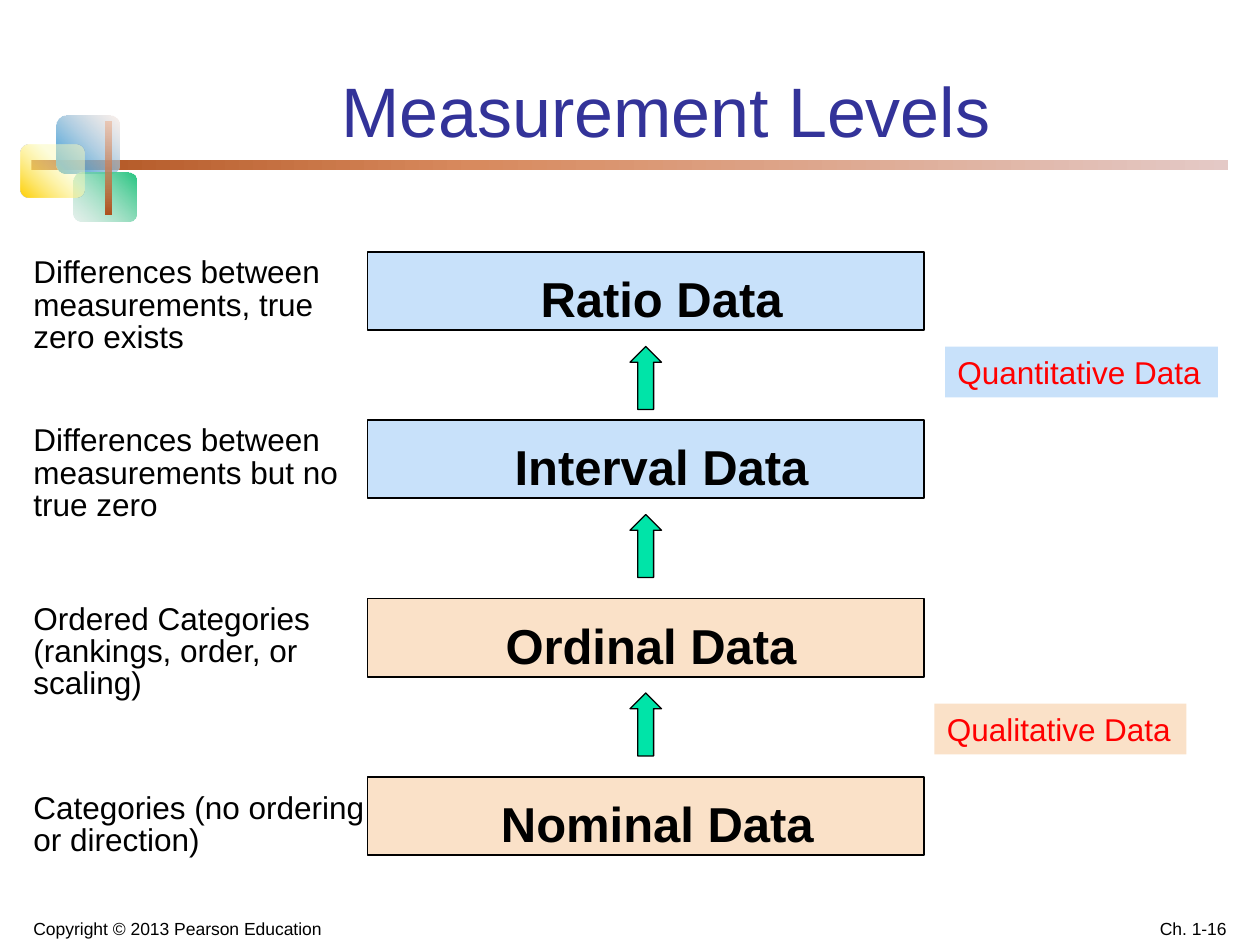
from lxml import etree
from pptx import Presentation
from pptx import util as u
from pptx.dml.color import RGBColor
from pptx.enum import shapes, text
from pptx.oxml.ns import qn

UNIT = 1 / 12  # the grid is 120 columns by 90 rows on a 10 x 7.5 inch slide
COLORS = {
    "title": "333399", "ink": "000000", "accent": "FF0000", "arrow": "00E4A8",
    "quantitative": "C8E1FA", "qualitative": "FAE1C8",
    "rust": "AE511E", "copper": "D88A5E", "blush": "E4C9C6", "peach": "EAA782",
    "blue": "2895D8", "cream": "F7E2D9", "green": "25C580", "mint": "CCE2D9",
    "yellow": "FFCF01", "lemon": "FCFCBC",
}
# name, kind, row, centre column of the name, note, note row, note width
LEVELS = [
    ("Ratio Data", "quantitative", 24, 63,
     "Differences between measurements, true zero exists", 24, 31),
    ("Interval Data", "quantitative", 40, 63,
     "Differences between measurements but no true zero", 40, 32),
    ("Ordinal Data", "qualitative", 57, 62,
     "Ordered Categories (rankings, order, or scaling)", 57, 35),
    ("Nominal Data", "qualitative", 74, 62.6,
     "Categories (no ordering or direction)", 75, 34),
]
# column, row, width, height, corner, angle, stops of (position, colour, opacity)
ORNAMENTS = [
    (3, 15.2, 114, 1, 0, 0,
     [(0, "rust", 100), (37, "copper", 100), (100, "blush", 100)]),
    (5.4, 11, 6, 5.5, 0.17, 315, [(0, "blue", 100), (100, "cream", 50)]),
    (7, 16.4, 6, 4.7, 0.17, 135, [(0, "green", 100), (100, "mint", 50)]),
    (2, 13.8, 6, 5, 0.17, 315, [(0, "yellow", 100), (63, "lemon", 50)]),
    (10, 11.6, 0.6, 8.8, 0, 270, [(0, "rust", 100), (100, "peach", 50)]),
]


def color(name):
    return RGBColor.from_string(COLORS[name])


def grid(*cells):
    return [u.Inches(cell * UNIT) for cell in cells]


def add_figure(page, kind, cells, fill=None, line_width=0):
    figure = page.shapes.add_shape(kind, *grid(*cells))
    figure.shadow.inherit = False
    if fill:
        figure.fill.solid()
        figure.fill.fore_color.rgb = color(fill)
    if line_width:
        figure.line.color.rgb = color("ink")
        figure.line.width = u.Pt(line_width)
    else:
        figure.line.fill.background()
    return figure


def add_text(page, words, cells, *, size=18, ink="ink", bold=False, align="LEFT",
             anchor="TOP", spacing=None, fill=None):
    box = page.shapes.add_textbox(*grid(*cells))
    if fill:
        box.fill.solid()
        box.fill.fore_color.rgb = color(fill)
    frame = box.text_frame
    frame.word_wrap = True
    frame.vertical_anchor = text.MSO_ANCHOR[anchor]
    para = frame.paragraphs[0]
    para.alignment = text.PP_ALIGN[align]
    if spacing:
        para.line_spacing = spacing
    span = para.add_run()
    span.text = words
    span.font.name = "Arial"
    span.font.size = u.Pt(size)
    span.font.bold = bold
    span.font.color.rgb = color(ink)


def add_ornament(page, cells, corner, angle, stops):
    """Rounded block whose gradient may fade to transparent."""
    block = add_figure(page, shapes.MSO_SHAPE.ROUNDED_RECTANGLE, cells)
    block.adjustments[0] = corner
    block.fill.gradient()
    gradient = block.fill._xPr.find(qn("a:gradFill"))
    gradient.find(qn("a:lin")).set("ang", str(angle * 60000))
    stop_list = gradient.find(qn("a:gsLst"))
    for stop in list(stop_list):
        stop_list.remove(stop)
    for position, name, opacity in stops:
        stop = etree.SubElement(stop_list, qn("a:gs"), pos=str(position * 1000))
        shade = etree.SubElement(stop, qn("a:srgbClr"), val=COLORS[name])
        if opacity < 100:
            etree.SubElement(shade, qn("a:alpha"), val=str(opacity * 1000))


def add_level(page, name, kind, row, centre, note, note_row, note_width):
    add_figure(page, shapes.MSO_SHAPE.RECTANGLE, (35, row, 53, 7.45), kind, 1)
    add_text(page, name, (centre - 23, row + 1, 46, 6.85),
             size=28, bold=True, align="CENTER")
    add_text(page, note, (2, note_row, note_width, 10.4), spacing=0.85)


def main():
    deck = Presentation()
    deck.slide_width, deck.slide_height = grid(120, 90)
    page = deck.slides.add_slide(deck.slide_layouts[6])

    for *cells, corner, angle, stops in ORNAMENTS:
        add_ornament(page, cells, corner, angle, stops)
    add_text(page, "Measurement Levels", (15, 5, 96.8, 10),
             size=40, ink="title", align="CENTER", anchor="BOTTOM")

    for level in LEVELS:
        add_level(page, *level)
    for _, _, row, *_ in LEVELS[:-1]:
        add_figure(page, shapes.MSO_SHAPE.UP_ARROW, (60, row + 9, 3, 6), "arrow", 0.75)

    add_text(page, "Quantitative Data", (90, 33, 26, 4.85),
             ink="accent", fill="quantitative")
    add_text(page, "Qualitative Data", (89, 67, 24, 4.85),
             ink="accent", fill="qualitative")

    add_text(page, "Copyright © 2013 Pearson Education", (2, 85.8, 64, 4.2),
             size=10, anchor="BOTTOM")
    add_text(page, "Ch. 1-16", (90, 85.8, 28, 4.2),
             size=10, align="RIGHT", anchor="BOTTOM")
    deck.save("out.pptx")


if __name__ == "__main__":
    main()
